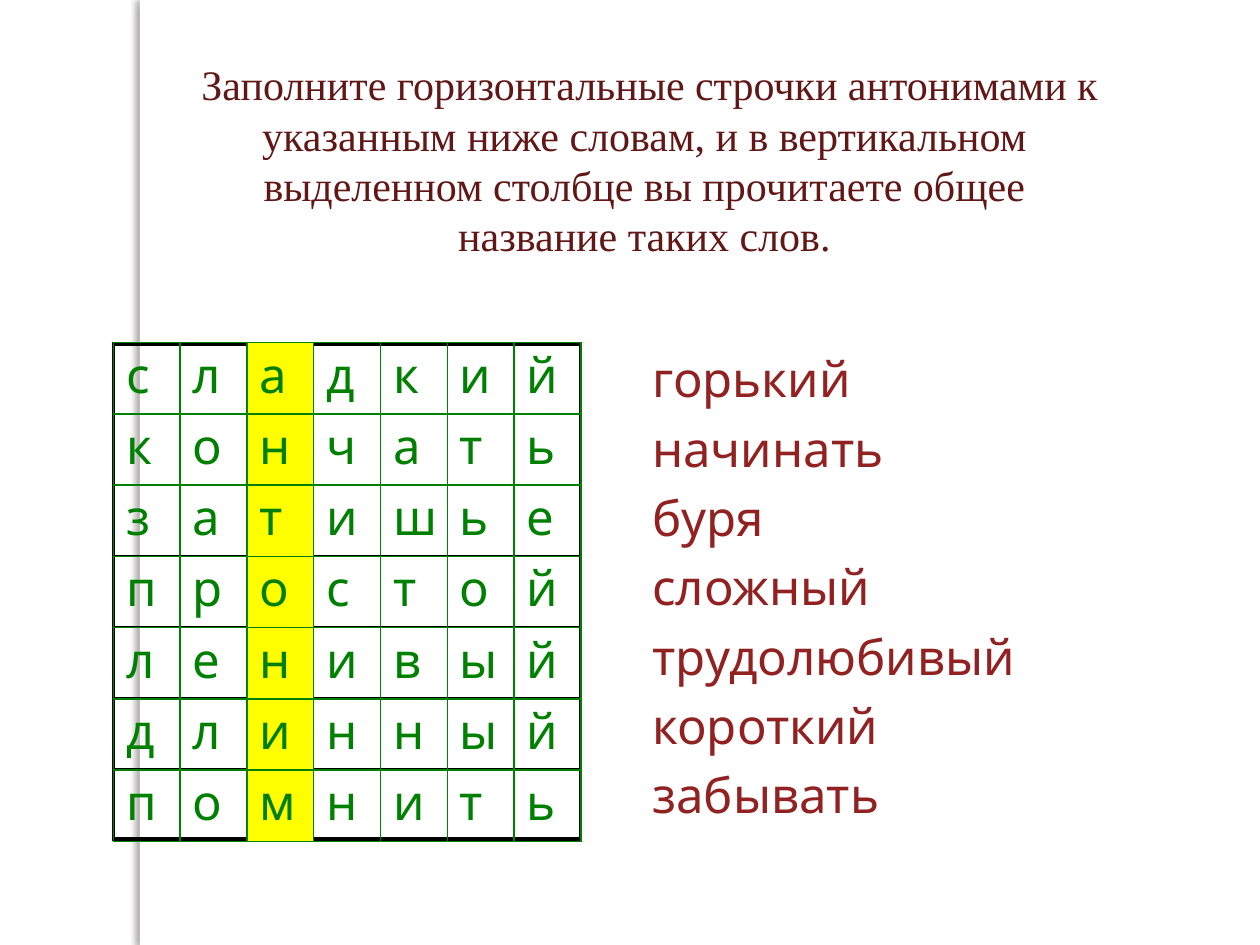
from dataclasses import dataclass

from lxml.etree import SubElement
from pptx import Presentation
from pptx.dml.color import RGBColor
from pptx.enum.shapes import MSO_SHAPE
from pptx.enum.text import MSO_ANCHOR, PP_ALIGN
from pptx.oxml.ns import qn
from pptx.slide import Slide
from pptx.table import _Cell
from pptx.text.text import _Paragraph
from pptx.util import Inches, Pt


@dataclass(frozen=True)
class TextStyle:
    font: str
    size: float
    color: str
    line_height: float


@dataclass(frozen=True)
class Theme:
    title: TextStyle = TextStyle("Times New Roman", 24, "621717", 28.7)
    clue: TextStyle = TextStyle("Comic Neue", 28, "922222", 33.6)
    letter: TextStyle = TextStyle("Comic Neue", 28, "008000", 33.6)
    paper: str = "FFFFFF"
    highlight: str = "FFFF00"
    frame: str = "000000"
    thin: float = 0.96
    thick: float = 2.2


@dataclass(frozen=True)
class Panel:
    width: float
    shadow_color: str
    opacity: int
    blur: float
    distance: float
    direction: int


@dataclass(frozen=True)
class Grid:
    top: float
    rows_height: float
    border: str
    outer_width: float
    filled: bool


THEME = Theme()
TASK = (
    " Заполните горизонтальные строчки антонимами к указанным ниже словам, "
    "и в вертикальном выделенном столбце вы прочитаете общее название таких слов."
)
CLUES = ["горький", "начинать", "буря", "сложный", "трудолюбивый", "короткий", "забывать"]
ANSWERS = ["сладкий", "кончать", "затишье", "простой", "ленивый", "длинный", "помнить"]
KEY_COLUMN = 2
GRID_LEFT, GRID_WIDTH, GRID_HEIGHT = 0.9, 3.71, 4.49
PANELS = [
    Panel(8.89, "000000", 43, 5, 2, 90),
    Panel(0.08, "736F63", 25, 3, 3, 180),
]
GRIDS = [
    Grid(2.73, 3.93, THEME.frame, THEME.thick, False),
    Grid(2.72, 3.96, THEME.letter.color, THEME.thin, True),
]


def style_paragraph(paragraph: _Paragraph, style: TextStyle) -> None:
    paragraph.line_spacing = Pt(style.line_height)
    for run in paragraph.runs:
        run.font.name = style.font
        run.font.size = Pt(style.size)
        run.font.color.rgb = RGBColor.from_string(style.color)


def add_panel(slide: Slide, panel: Panel) -> None:
    rectangle = slide.shapes.add_shape(
        MSO_SHAPE.RECTANGLE, Inches(1.11), 0, Inches(panel.width), Inches(7.5)
    )
    rectangle.fill.solid()
    rectangle.fill.fore_color.rgb = RGBColor.from_string(THEME.paper)
    rectangle.line.fill.background()
    rectangle.shadow.inherit = False
    effects = rectangle._element.spPr.find(qn("a:effectLst"))
    shadow = SubElement(
        effects,
        qn("a:outerShdw"),
        blurRad=str(Pt(panel.blur)),
        dist=str(Pt(panel.distance)),
        dir=str(panel.direction * 60000),
        algn="ctr",
        rotWithShape="0",
    )
    color = SubElement(shadow, qn("a:srgbClr"), val=panel.shadow_color)
    SubElement(color, qn("a:alpha"), val=str(panel.opacity * 1000))


def add_title(slide: Slide) -> None:
    title = slide.shapes.add_textbox(Inches(1.41), Inches(0.36), Inches(7.41), Inches(1.81))
    frame = title.text_frame
    frame.word_wrap = True
    frame.vertical_anchor = MSO_ANCHOR.MIDDLE
    frame.text = TASK
    frame.paragraphs[0].alignment = PP_ALIGN.CENTER
    style_paragraph(frame.paragraphs[0], THEME.title)


def add_clues(slide: Slide) -> None:
    clues = slide.shapes.add_textbox(Inches(5.08), Inches(2.72), Inches(3.83), Inches(3.95))
    frame = clues.text_frame
    frame.word_wrap = True
    frame.text = "\n".join(CLUES)
    for index, paragraph in enumerate(frame.paragraphs):
        properties = paragraph._p.get_or_add_pPr()
        properties.set("marL", str(Inches(0.58)))
        properties.set("indent", str(-Inches(0.58)))
        if index:
            paragraph.space_before = Pt(6)
        style_paragraph(paragraph, THEME.clue)


def set_borders(cell: _Cell, color: str, widths: dict[str, float]) -> None:
    properties = cell._tc.get_or_add_tcPr()
    for side, width in widths.items():
        border = SubElement(properties, qn(f"a:ln{side}"), w=str(Pt(width)))
        fill = SubElement(border, qn("a:solidFill"))
        SubElement(fill, qn("a:srgbClr"), val=color)


def add_grid(slide: Slide, grid: Grid) -> None:
    row_count, column_count = len(ANSWERS), len(ANSWERS[0])
    holder = slide.shapes.add_table(
        row_count,
        column_count,
        Inches(GRID_LEFT),
        Inches(grid.top),
        Inches(GRID_WIDTH),
        Inches(grid.rows_height),
    )
    holder.height = Inches(GRID_HEIGHT)
    table = holder.table
    table.first_row = False
    table.horz_banding = False
    for row, answer in enumerate(ANSWERS):
        for column, letter in enumerate(answer):
            cell = table.cell(row, column)
            edges = {
                "L": column == 0,
                "R": column == column_count - 1,
                "T": row == 0,
                "B": row == row_count - 1,
            }
            widths = {
                side: grid.outer_width if outer else THEME.thin
                for side, outer in edges.items()
            }
            set_borders(cell, grid.border, widths)
            if column == KEY_COLUMN:
                cell.fill.solid()
                cell.fill.fore_color.rgb = RGBColor.from_string(THEME.highlight)
            else:
                cell.fill.background()
            if grid.filled:
                cell.margin_top = Inches(0.03)
                cell.text_frame.text = letter
                style_paragraph(cell.text_frame.paragraphs[0], THEME.letter)


def main() -> None:
    presentation = Presentation()
    presentation.slide_width = Inches(10)
    presentation.slide_height = Inches(7.5)
    slide = presentation.slides.add_slide(presentation.slide_layouts[6])
    for panel in PANELS:
        add_panel(slide, panel)
    add_title(slide)
    add_clues(slide)
    for grid in GRIDS:
        add_grid(slide, grid)
    presentation.save("out.pptx")


if __name__ == "__main__":
    main()
